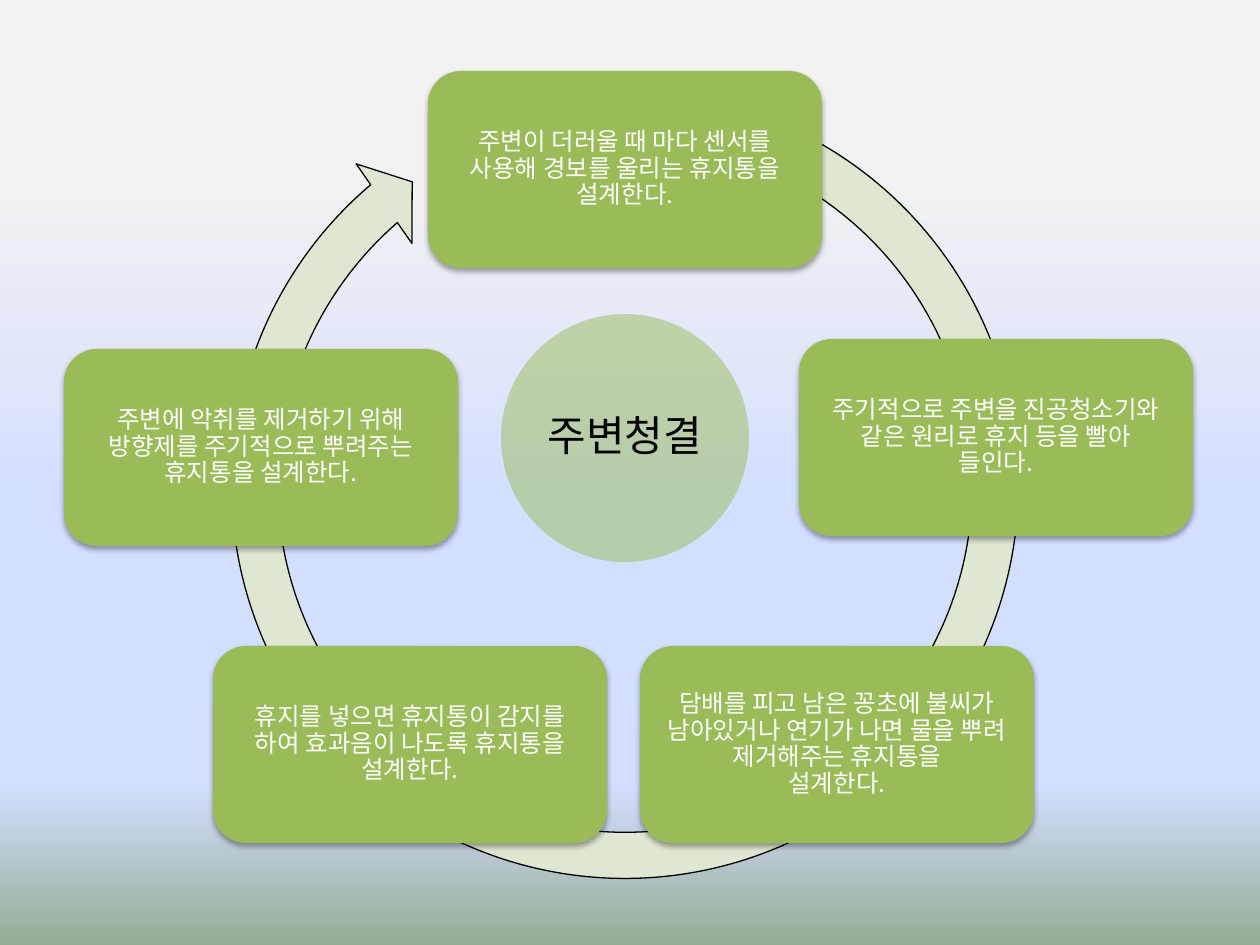
from dataclasses import dataclass

from lxml.etree import SubElement
from pptx import Presentation
from pptx.dml.color import RGBColor
from pptx.enum.shapes import MSO_SHAPE as SHAPE
from pptx.enum.text import MSO_ANCHOR as ANCHOR, PP_ALIGN as ALIGN
from pptx.oxml.ns import qn
from pptx.util import Emu, Pt

FONT = "Noto Sans CJK KR"
GREEN, PALE, WHITE, BLACK = "9BBB59", "DEE7D1", "FFFFFF", "000000"
CARD_W, CARD_H, CARD_INSET = 394, 197, 16
BACKGROUND = [(19, "F2F2F2"), (53, "D4DEFF"), (83, "D4DEFF"), (100, "96AB94")]
ARROW_ADJUSTMENTS = [0.055, 3.307, 137.65, 173.93, 0.058]


@dataclass(frozen=True)
class Card:
    x: int
    y: int
    text: str


CARDS = [
    Card(428, 71, "주변이 더러울 때 마다 센서를 사용해 경보를 울리는 휴지통을 설계한다."),
    Card(799, 339, "주기적으로 주변을 진공청소기와 같은 원리로 휴지 등을 빨아 들인다."),
    Card(640, 646, "담배를 피고 남은 꽁초에 불씨가 남아있거나 연기가 나면 물을 뿌려 "
                   "제거해주는 휴지통을\v설계한다."),
    Card(213, 646, "휴지를 넣으면 휴지통이 감지를 하여 효과음이 나도록 휴지통을 설계한다."),
    Card(64, 349, "주변에 악취를 제거하기 위해 방향제를 주기적으로 뿌려주는 휴지통을 설계한다."),
]


def px(n: int) -> Emu:
    return Emu(round(n * 914400 / 126))


def rgb(value: str) -> RGBColor:
    return RGBColor.from_string(value)


def add_color(parent, value: str, alpha: int = 100) -> None:
    color = SubElement(parent, qn("a:srgbClr"), val=value)
    if alpha < 100:
        SubElement(color, qn("a:alpha"), val=str(alpha * 1000))


def paint_background(s) -> None:
    fill = s.background.fill
    fill.gradient()
    fill.gradient_angle = 270
    stops = s.element.find(".//" + qn("a:gsLst"))
    stops.clear()
    for position, color in BACKGROUND:
        add_color(SubElement(stops, qn("a:gs"), pos=str(position * 1000)), color)


def add_filled(s, kind: SHAPE, x: int, y: int, w: int, h: int, color: str):
    sp = s.shapes.add_shape(kind, px(x), px(y), px(w), px(h))
    sp.shadow.inherit = False
    sp.fill.solid()
    sp.fill.fore_color.rgb = rgb(color)
    sp.line.fill.background()
    return sp


def write(sp, text: str, size: int, color: str, inset: int) -> None:
    tf = sp.text_frame
    tf.word_wrap = True
    tf.vertical_anchor = ANCHOR.MIDDLE
    tf.margin_left = tf.margin_right = tf.margin_top = tf.margin_bottom = px(inset)
    p = tf.paragraphs[0]
    p.text = text
    p.alignment = ALIGN.CENTER
    p.line_spacing = 0.9
    p.space_after = Pt(round(size * 0.35))
    p.font.size = Pt(size)
    p.font.color.rgb = rgb(color)
    p.font.name = FONT
    SubElement(sp.element.find(".//" + qn("a:defRPr")), qn("a:ea"), typeface=FONT)


def add_hub(s) -> None:
    sp = add_filled(s, SHAPE.OVAL, 501, 314, 248, 248, GREEN)
    color = sp.element.spPr.find(qn("a:solidFill")).find(qn("a:srgbClr"))
    SubElement(color, qn("a:alpha"), val="50000")
    write(sp, "주변청결", 24, BLACK, 0)


def add_cycle_arrow(s) -> None:
    sp = add_filled(s, SHAPE.CIRCULAR_ARROW, 206, 66, 838, 838, PALE)
    for i, value in enumerate(ARROW_ADJUSTMENTS):
        sp.adjustments[i] = value
    sp.line.color.rgb = rgb(BLACK)
    sp.line.width = Pt(0.75)


def add_card(s, card: Card) -> None:
    sp = add_filled(s, SHAPE.ROUNDED_RECTANGLE, card.x, card.y, CARD_W, CARD_H, GREEN)
    effects = sp.element.spPr.find(qn("a:effectLst"))
    shadow = SubElement(effects, qn("a:outerShdw"), blurRad=str(Pt(3.1)),
                        dist=str(Pt(1.8)), dir="5400000", rotWithShape="0")
    add_color(shadow, BLACK, 35)
    write(sp, card.text, 14, WHITE, CARD_INSET)


def main() -> None:
    """Build the cleanliness cycle slide."""
    prs = Presentation()
    prs.slide_width, prs.slide_height = px(1260), px(945)
    s = prs.slides.add_slide(prs.slide_layouts[6])
    paint_background(s)
    add_hub(s)
    add_cycle_arrow(s)
    for card in CARDS:
        add_card(s, card)
    prs.save("out.pptx")


if __name__ == "__main__":
    main()
